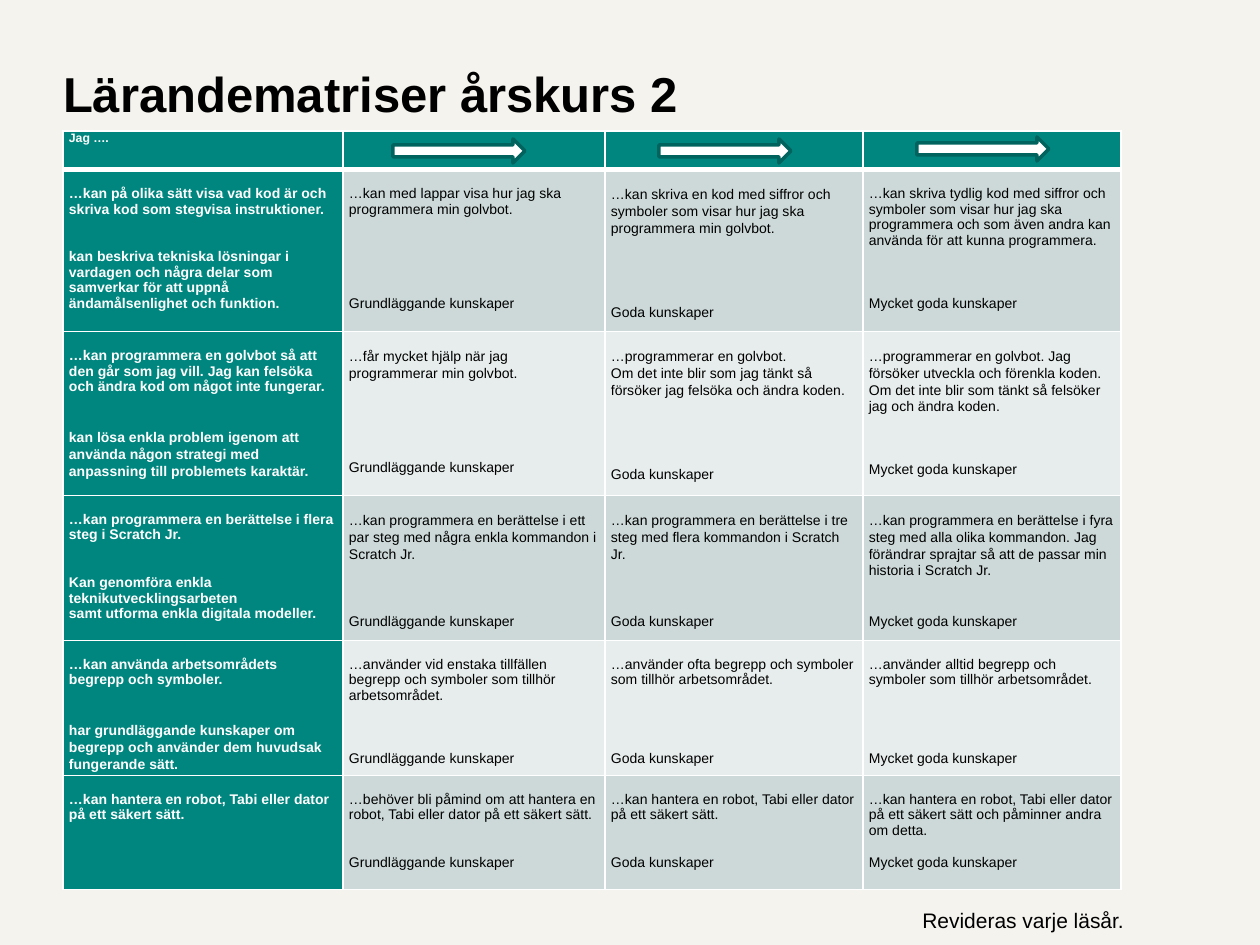
from lxml import etree
from pptx import Presentation
from pptx import util as u
from pptx.dml.color import RGBColor
from pptx.enum import shapes, text
from pptx.oxml import ns

PX = 914400 // 126
BACKGROUND = RGBColor(0xF5, 0xF3, 0xEE)
TEAL = RGBColor(0x00, 0x86, 0x7F)
DARK_TEAL = RGBColor(0x00, 0x63, 0x5E)
BANDS = [RGBColor(0xCC, 0xD9, 0xD8), RGBColor(0xE7, 0xED, 0xEC)]
WHITE = RGBColor(0xFF, 0xFF, 0xFF)
BLACK = RGBColor(0x00, 0x00, 0x00)

TIGHT, LOOSE = 1.0, 1.07
LINE_PT = 9
BASIC, GOOD, VERY_GOOD = "Grundläggande kunskaper", "Goda kunskaper", "Mycket goda kunskaper"

TITLE = "Lärandematriser årskurs 2"
FOOTER = "Revideras varje läsår."
COLUMN_WIDTHS = [280, 262, 258, 258]
ROW_HEIGHTS = [37, 162, 164, 145, 135, 114]
TABLE_LEFT, TABLE_TOP = 63, 131
ARROWS = [(393, 139), (659, 139), (917, 137)]

# One list per cell; each paragraph is (text, lines of space before, line spacing).
MATRIX = [
    [
        [("…kan på olika sätt visa vad kod är och skriva kod som stegvisa instruktioner.", 0, TIGHT),
         ("kan beskriva tekniska lösningar i vardagen och några delar som samverkar för att "
          "uppnå ändamålsenlighet och funktion.", 2, TIGHT)],
        [("…kan med lappar visa hur jag ska programmera min golvbot.", 0, TIGHT), (BASIC, 5, TIGHT)],
        [("…kan skriva en kod med siffror och symboler som visar hur jag ska programmera "
          "min golvbot.", 0, LOOSE), (GOOD, 4, LOOSE)],
        [("…kan skriva tydlig kod med siffror och symboler som visar hur jag ska programmera "
          "och som även andra kan använda för att kunna programmera.", 0, TIGHT),
         (VERY_GOOD, 3, TIGHT)],
    ],
    [
        [("…kan programmera en golvbot så att den går som jag vill. Jag kan felsöka och "
          "ändra kod om något inte fungerar.", 0, TIGHT),
         ("kan lösa enkla problem igenom att använda någon strategi med anpassning till "
          "problemets karaktär.", 2, LOOSE)],
        [("…får mycket hjälp när jag programmerar min golvbot.", 0, LOOSE), (BASIC, 5, TIGHT)],
        [("…programmerar en golvbot.", 0, LOOSE),
         ("Om det inte blir som jag tänkt så försöker jag felsöka och ändra koden.", 0, LOOSE),
         (GOOD, 4, LOOSE)],
        [("…programmerar en golvbot. Jag försöker utveckla och förenkla koden.", 0, LOOSE),
         ("Om det inte blir som tänkt så felsöker jag och ändra koden.", 0, LOOSE),
         (VERY_GOOD, 3, TIGHT)],
    ],
    [
        [("…kan programmera en berättelse i flera steg i Scratch Jr.", 0, TIGHT),
         ("Kan genomföra enkla teknikutvecklingsarbeten", 2, TIGHT),
         ("samt utforma enkla digitala modeller.", 0, TIGHT)],
        [("…kan programmera en berättelse i ett par steg med några enkla kommandon i "
          "Scratch Jr.", 0, LOOSE), (BASIC, 3, LOOSE)],
        [("…kan programmera en berättelse i tre steg med flera kommandon i Scratch Jr.", 0, LOOSE),
         (GOOD, 3, LOOSE)],
        [("…kan programmera en berättelse i fyra steg med alla olika kommandon. Jag förändrar "
          "sprajtar så att de passar min historia i Scratch Jr.", 0, LOOSE),
         (VERY_GOOD, 2, LOOSE)],
    ],
    [
        [("…kan använda arbetsområdets begrepp och symboler.", 0, TIGHT),
         ("har grundläggande kunskaper om begrepp och använder dem huvudsak fungerande sätt.",
          2, LOOSE)],
        [("…använder vid enstaka tillfällen begrepp och symboler som tillhör arbetsområdet.",
          0, TIGHT), (BASIC, 3, TIGHT)],
        [("…använder ofta begrepp och symboler som tillhör arbetsområdet.", 0, TIGHT),
         (GOOD, 4, TIGHT)],
        [("…använder alltid begrepp och symboler som tillhör arbetsområdet.", 0, TIGHT),
         (VERY_GOOD, 4, TIGHT)],
    ],
    [
        [("…kan hantera en robot, Tabi eller dator på ett säkert sätt.", 0, TIGHT)],
        [("…behöver bli påmind om att hantera en robot, Tabi eller dator på ett säkert sätt.",
          0, TIGHT), (BASIC, 2, TIGHT)],
        [("…kan hantera en robot, Tabi eller dator på ett säkert sätt.", 0, TIGHT),
         (GOOD, 2, TIGHT)],
        [("…kan hantera en robot, Tabi eller dator på ett säkert sätt och påminner andra om "
          "detta.", 0, TIGHT), (VERY_GOOD, 1, TIGHT)],
    ],
]


def px(*lengths):
    return [length * PX for length in lengths]


def write(frame, paragraphs, size, color=BLACK, bold=False):
    """Fill a text frame with (text, lines of space before, line spacing) paragraphs."""
    frame.word_wrap = True
    for i, (words, gap, spacing) in enumerate(paragraphs):
        para = frame.paragraphs[0] if i == 0 else frame.add_paragraph()
        para.alignment = text.PP_ALIGN.LEFT
        para.line_spacing = spacing
        para.space_before = u.Pt(round(gap * LINE_PT * spacing, 1))
        run = para.add_run()
        run.text = words
        run.font.name = "Arial"
        run.font.size = u.Pt(size)
        run.font.bold = bold
        run.font.color.rgb = color


def style_cell(cell, fill, top=1, bottom=1, top_margin=0):
    cell.margin_left = cell.margin_right = 6 * PX
    cell.margin_top, cell.margin_bottom = top_margin * PX, 0
    properties = cell._tc.get_or_add_tcPr()
    for side, width in (("L", 1), ("R", 1), ("T", top), ("B", bottom)):
        border = etree.SubElement(properties, ns.qn(f"a:ln{side}"), w=str(u.Pt(width)))
        solid = etree.SubElement(border, ns.qn("a:solidFill"))
        etree.SubElement(solid, ns.qn("a:srgbClr"), val=str(WHITE))
    cell.fill.solid()
    cell.fill.fore_color.rgb = fill


def add_matrix(slide):
    matrix = slide.shapes.add_table(
        len(ROW_HEIGHTS), len(COLUMN_WIDTHS),
        *px(TABLE_LEFT, TABLE_TOP, sum(COLUMN_WIDTHS), sum(ROW_HEIGHTS))).table
    for column, width in zip(matrix.columns, COLUMN_WIDTHS):
        column.width = width * PX
    for row, height in zip(matrix.rows, ROW_HEIGHTS):
        row.height = height * PX
    for c in range(len(COLUMN_WIDTHS)):
        style_cell(matrix.cell(0, c), TEAL, bottom=3)
    write(matrix.cell(0, 0).text_frame, [("Jag ….", 0, TIGHT)], size=7, color=WHITE, bold=True)
    for r, goals in enumerate(MATRIX, start=1):
        for c, paragraphs in enumerate(goals):
            cell = matrix.cell(r, c)
            is_goal = c == 0
            style_cell(cell, TEAL if is_goal else BANDS[(r - 1) % 2],
                       top=3 if r == 1 else 1, top_margin=16)
            write(cell.text_frame, paragraphs, size=8,
                  color=WHITE if is_goal else BLACK, bold=is_goal)


def add_arrow(slide, left, top):
    arrow = slide.shapes.add_shape(shapes.MSO_SHAPE.RIGHT_ARROW, *px(left, top, 132, 24))
    arrow.shadow.inherit = False
    arrow.fill.solid()
    arrow.fill.fore_color.rgb = WHITE
    arrow.line.color.rgb = DARK_TEAL
    arrow.line.width = u.Pt(2)


def main():
    deck = Presentation()
    deck.slide_width, deck.slide_height = px(1260, 945)
    slide = deck.slides.add_slide(deck.slide_layouts[5])
    slide.background.fill.solid()
    slide.background.fill.fore_color.rgb = BACKGROUND

    title = slide.shapes.title
    title.left, title.top, title.width, title.height = px(63, 63, 924, 856)
    frame = title.text_frame
    frame.margin_left = frame.margin_top = frame.margin_right = frame.margin_bottom = 0
    frame.vertical_anchor = text.MSO_ANCHOR.TOP
    frame.auto_size = text.MSO_AUTO_SIZE.NONE
    write(frame, [(TITLE, 0, TIGHT)], size=28, bold=True)

    add_matrix(slide)
    for left, top in ARROWS:
        add_arrow(slide, left, top)

    footer = slide.shapes.add_textbox(*px(910, 901, 252, 38))
    write(footer.text_frame, [(FOOTER, 0, TIGHT)], size=12)
    deck.save("out.pptx")


if __name__ == "__main__":
    main()
